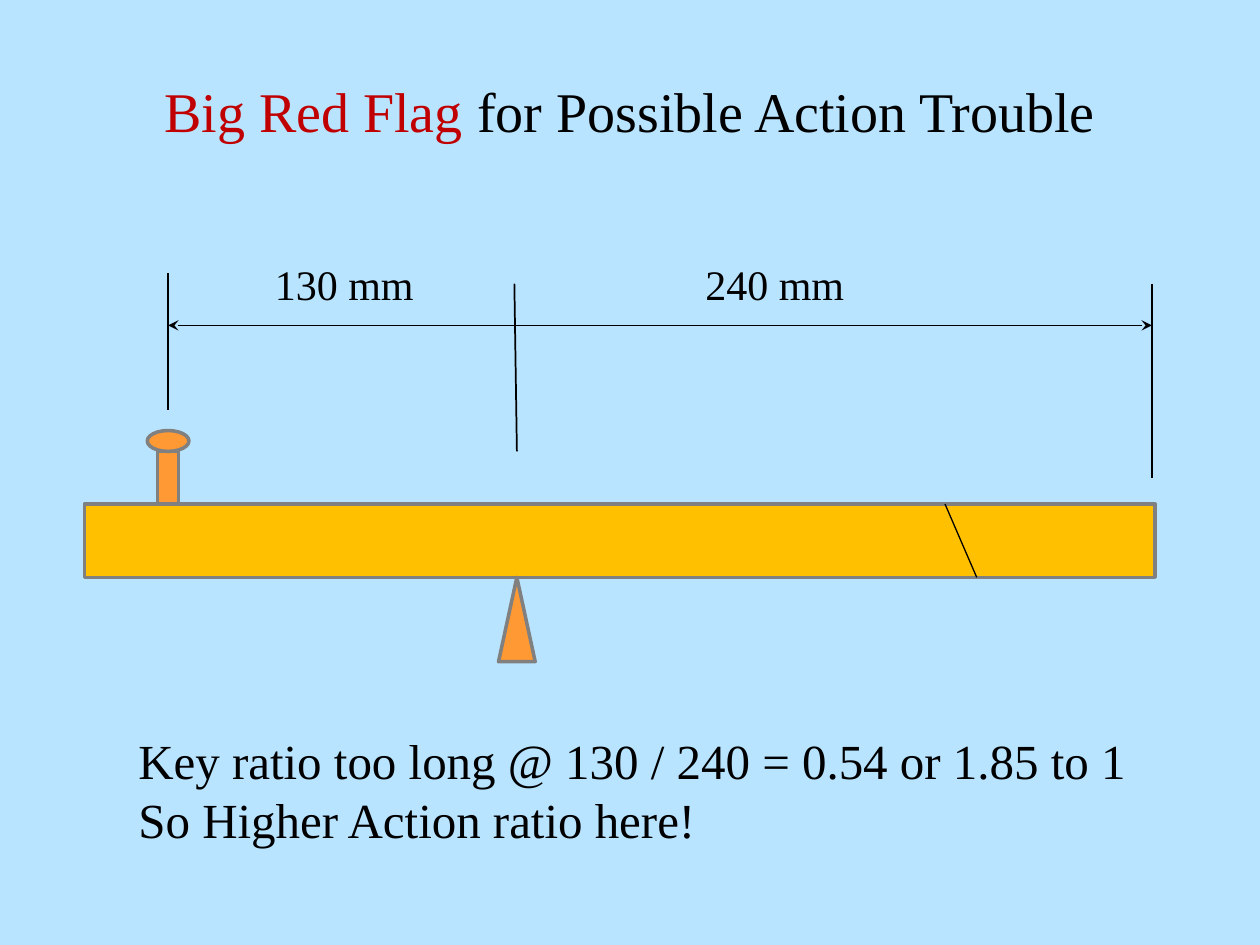
from lxml.etree import SubElement
from pptx import Presentation
from pptx.dml.color import RGBColor
from pptx.enum.shapes import MSO_CONNECTOR as Connector, MSO_SHAPE as Preset
from pptx.enum.text import MSO_ANCHOR as Anchor, PP_ALIGN as Align
from pptx.oxml.ns import qn
from pptx.util import Cm, Pt

COLORS = {
    "background": "B9E4FF",
    "text": "000000",
    "flag": "C00000",
    "key": "FFC000",
    "part": "FF9933",
    "outline": "808080",
}


def color(name):
    """Return the named palette colour."""
    return RGBColor.from_string(COLORS[name])


def add_run(paragraph, text, size=24, fill="text", font="Times New Roman"):
    """Append formatted text to a paragraph."""
    run = paragraph.add_run()
    run.text = text
    run.font.name = font
    run.font.size = Pt(size)
    run.font.color.rgb = color(fill)


class SlideBuilder:
    """Draws styled elements on one slide, with lengths in centimetres."""

    def __init__(self, slide):
        """Keep the slide and paint its background."""
        self.slide = slide
        self.outline_width = Pt(2)
        slide.background.fill.solid()
        slide.background.fill.fore_color.rgb = color("background")

    def title(self, box, parts, size=32):
        """Place the title and fill it with (text, colour) parts."""
        shape = self.slide.shapes.title
        shape.left, shape.top, shape.width, shape.height = map(Cm, box)
        frame = shape.text_frame
        frame.word_wrap = True
        frame.vertical_anchor = Anchor.MIDDLE
        paragraph = frame.paragraphs[0]
        paragraph.alignment = Align.CENTER
        for text, fill in parts:
            add_run(paragraph, text, size=size, fill=fill)

    def text(self, box, lines, size=24):
        """Add a text box with one paragraph for each line."""
        frame = self.slide.shapes.add_textbox(*map(Cm, box)).text_frame
        frame.word_wrap = True
        for index, line in enumerate(lines):
            paragraph = frame.add_paragraph() if index else frame.paragraphs[0]
            add_run(paragraph, line, size=size)

    def shape(self, preset, box, fill="part"):
        """Add a filled and outlined preset shape."""
        shape = self.slide.shapes.add_shape(preset, *map(Cm, box))
        shape.shadow.inherit = False
        shape.fill.solid()
        shape.fill.fore_color.rgb = color(fill)
        shape.line.color.rgb = color("outline")
        shape.line.width = self.outline_width

    def line(self, start, end, width=1, arrows=False):
        """Add a straight line, with arrowheads at both ends if asked."""
        connector = self.slide.shapes.add_connector(
            Connector.STRAIGHT, *map(Cm, (*start, *end)))
        connector.line.color.rgb = color("text")
        connector.line.width = Pt(width)
        properties = connector.line._get_or_add_ln()
        if arrows:
            for tag in ("a:headEnd", "a:tailEnd"):
                SubElement(properties, qn(tag), type="stealth")
        SubElement(properties.getparent(), qn("a:effectLst"))


def main():
    """Build the key ratio slide and save it."""
    presentation = Presentation()
    presentation.slide_width, presentation.slide_height = Cm(25.4), Cm(19.05)
    slide = presentation.slides.add_slide(presentation.slide_layouts[5])
    builder = SlideBuilder(slide)

    capstan_x, balance_x, front_x = 3.39, 10.42, 23.22
    key_left, key_top, key_width, key_height = 1.7, 10.16, 21.59, 1.48
    key_bottom = key_top + key_height
    dimension_y = 6.56
    label_top, label_width, label_height = 5.08, 4.02, 1.28

    builder.title((1.9, 0.64, 21.6, 3.18),
                  [("Big Red Flag ", "flag"),
                   ("for Possible Action Trouble", "text")])

    builder.line((capstan_x, 5.51), (capstan_x, 8.26))
    builder.line((front_x, 5.72), (front_x, 9.63))

    builder.shape(Preset.RECTANGLE,
                  (key_left, key_top, key_width, key_height), fill="key")
    builder.line((19.05, key_top), (19.69, key_bottom), width=0.75)
    builder.shape(Preset.ISOSCELES_TRIANGLE,
                  (balance_x - 0.37, key_bottom, 0.74, 1.7))
    builder.shape(Preset.RECTANGLE, (capstan_x - 0.21, 9.1, 0.42, 1.06))
    builder.shape(Preset.OVAL, (capstan_x - 0.42, 8.68, 0.84, 0.42))

    builder.line((balance_x - 0.05, 5.72), (balance_x, 9.1))
    builder.line((capstan_x, dimension_y), (front_x, dimension_y),
                 width=0.75, arrows=True)
    for left, label in ((5.29, "130 mm"), (13.97, "240 mm")):
        builder.text((left, label_top, label_width, label_height), [label])

    builder.text((2.54, 14.6, 20.75, 2.64),
                 ["Key ratio too long @ 130 / 240 = 0.54 or 1.85 to 1",
                  "So Higher Action ratio here!"], size=28)
    presentation.save("out.pptx")


if __name__ == "__main__":
    main()
